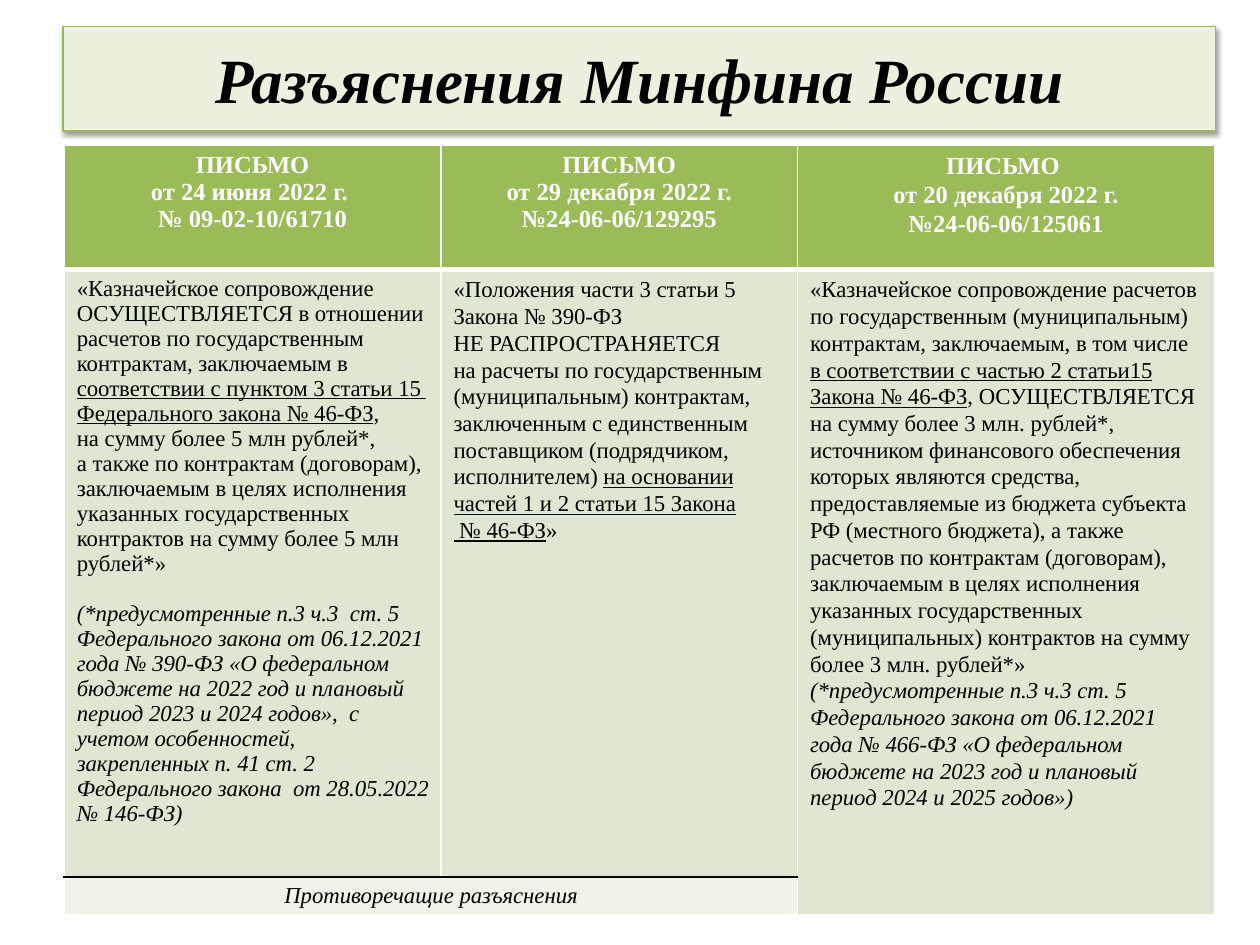
from lxml import etree
from pptx import Presentation
from pptx import util as u
from pptx.dml.color import RGBColor
from pptx.enum import text
from pptx.oxml import parse_xml
from pptx.oxml.ns import nsdecls, qn

INK = {"black": "000000", "white": "FFFFFF", "pale": "EBF1DE", "edge": "98B955",
       "head": "9BBB59", "body": "DEE7D1", "foot": "EFF3EA"}
FONT = "Times New Roman"
COLS = [2.99, 2.83, 3.31]
ROWS = [0.99, 4.82, 0.26]

# Underscores enclose underlined words.
HEADS = [
    ["ПИСЬМО", "от 24 июня 2022 г. ", "№ 09-02-10/61710"],
    ["ПИСЬМО", "от 29 декабря 2022 г.", "№24-06-06/129295"],
    ["ПИСЬМО ", "от 20 декабря 2022 г.", "№24-06-06/125061"],
]
BODY = [
    ["«Казначейское сопровождение ОСУЩЕСТВЛЯЕТСЯ в отношении расчетов по "
     "государственным контрактам, заключаемым в _соответствии с пунктом 3 статьи 15  "
     "Федерального закона № 46-ФЗ_,",
     "на сумму более 5 млн рублей*,",
     "а также по контрактам (договорам), заключаемым в целях исполнения указанных "
     "государственных контрактов на сумму более 5 млн рублей*»"],
    ["«Положения части 3 статьи 5 Закона № 390-ФЗ",
     "НЕ РАСПРОСТРАНЯЕТСЯ",
     "на расчеты по государственным (муниципальным) контрактам, заключенным с "
     "единственным поставщиком (подрядчиком, исполнителем) _на основании частей 1 и 2 "
     "статьи 15 Закона_",
     "_ № 46-ФЗ_»"],
    ["«Казначейское сопровождение расчетов по государственным (муниципальным) "
     "контрактам, заключаемым, в том числе _в соответствии с частью 2 статьи15 Закона "
     "№ 46-ФЗ_, ОСУЩЕСТВЛЯЕТСЯ на сумму более 3 млн. рублей*, источником финансового "
     "обеспечения которых являются средства, предоставляемые из бюджета субъекта РФ "
     "(местного бюджета), а также расчетов по контрактам (договорам), заключаемым в "
     "целях исполнения указанных государственных (муниципальных) контрактов на сумму "
     "более 3 млн. рублей*»"],
]
NOTES = [
    "(*предусмотренные п.3 ч.3  ст. 5 Федерального закона от 06.12.2021 года № 390-ФЗ "
    "«О федеральном бюджете на 2022 год и плановый период 2023 и 2024 годов»,  с учетом "
    "особенностей, закрепленных п. 41 ст. 2  Федерального закона  от 28.05.2022 № 146-ФЗ)",
    None,
    "(*предусмотренные п.3 ч.3 ст. 5 Федерального закона от 06.12.2021 года № 466-ФЗ "
    "«О федеральном бюджете на 2023 год и плановый период 2024 и 2025 годов»)",
]
SPACING = [None, 1.07, 1.07]


class Deck:
    def __init__(self):
        self.prs = Presentation()
        self.prs.slide_width, self.prs.slide_height = u.Inches(10), u.Inches(7.5)
        self.slide = self.prs.slides.add_slide(self.prs.slide_layouts[5])

    def paint(self, fill, ink):
        fill.solid()
        fill.fore_color.rgb = RGBColor.from_string(INK[ink])

    def style(self, par, size, ink="black", bold=False, italic=False, center=False):
        font = par.font
        font.name, font.size, font.bold, font.italic = FONT, u.Pt(size), bold, italic
        font.color.rgb = RGBColor.from_string(INK[ink])
        par.alignment = text.PP_ALIGN.CENTER if center else text.PP_ALIGN.LEFT

    def title(self, words, *box):
        shape = self.slide.shapes.title
        shape.left, shape.top, shape.width, shape.height = map(u.Inches, box)
        self.paint(shape.fill, "pale")
        self.paint(shape.line.fill, "edge")
        shape.line.width = u.Pt(0.75)
        shape.text_frame.text = words
        shape.text_frame.vertical_anchor = text.MSO_ANCHOR.MIDDLE
        self.style(shape.text_frame.paragraphs[0], 36, bold=True, italic=True, center=True)
        shape._element.spPr.append(parse_xml(
            f'<a:effectLst {nsdecls("a")}><a:outerShdw blurRad="40000" dist="20000" '
            f'dir="5400000" rotWithShape="0"><a:srgbClr val="{INK["black"]}">'
            '<a:alpha val="38000"/></a:srgbClr></a:outerShdw></a:effectLst>'))

    def table(self, left, top):
        grid = self.slide.shapes.add_table(
            len(ROWS), len(COLS), u.Inches(left), u.Inches(top),
            u.Inches(sum(COLS)), u.Inches(sum(ROWS))).table
        for col, wide in zip(grid.columns, COLS):
            col.width = u.Inches(wide)
        for row, high in zip(grid.rows, ROWS):
            row.height = u.Inches(high)
        return grid

    def edges(self, cell, **sides):
        """Draw all four borders; sides (L, R, T, B) override white at 1 pt."""
        props = cell._tc.get_or_add_tcPr()
        for side in "LRTB":
            ink, wide = sides.get(side, ("white", 1))
            line = etree.SubElement(props, qn(f"a:ln{side}"), w=str(u.Pt(wide)))
            fill = etree.SubElement(line, qn("a:solidFill"))
            etree.SubElement(fill, qn("a:srgbClr"), val=INK[ink])

    def cell(self, cell, fill, lines, size=13, spacing=None, **look):
        self.paint(cell.fill, fill)
        frame = cell.text_frame
        for i, line in enumerate(lines):
            par = frame.add_paragraph() if i else frame.paragraphs[0]
            self.style(par, size, **look)
            par.line_spacing = spacing
            for j, part in enumerate(line.split("_")):
                if part:
                    run = par.add_run()
                    run.text = part
                    if j % 2:
                        run.font.underline = True

    def note(self, cell, words, spacing, gap):
        par = cell.text_frame.add_paragraph()
        par.text = words
        self.style(par, 13, italic=True)
        par.line_spacing = spacing
        par.space_before = u.Pt(gap)


def main():
    deck = Deck()
    deck.title("Разъяснения Минфина России", 0.5, 0.21, 9.15, 0.83)
    grid = deck.table(0.51, 1.15)
    thick, rule = ("white", 3), ("black", 1)
    for c in range(len(COLS)):
        low = rule if c < 2 else ("white", 1)
        head, body, foot = (grid.cell(r, c) for r in range(len(ROWS)))
        deck.edges(head, B=thick)
        deck.edges(body, T=thick, B=low)
        deck.edges(foot, T=low)
        deck.cell(head, "head", HEADS[c], 14, SPACING[c] if c == 2 else None,
                  ink="white", bold=True, center=True)
        deck.cell(body, "body", BODY[c], spacing=SPACING[c])
        if NOTES[c]:
            deck.note(body, NOTES[c], SPACING[c], 0 if c else 14.4)
    grid.cell(1, 2).merge(grid.cell(2, 2))
    grid.cell(2, 0).merge(grid.cell(2, 1))
    deck.cell(grid.cell(2, 0), "foot", ["Противоречащие разъяснения"],
              italic=True, center=True)
    deck.prs.save("out.pptx")


if __name__ == "__main__":
    main()
